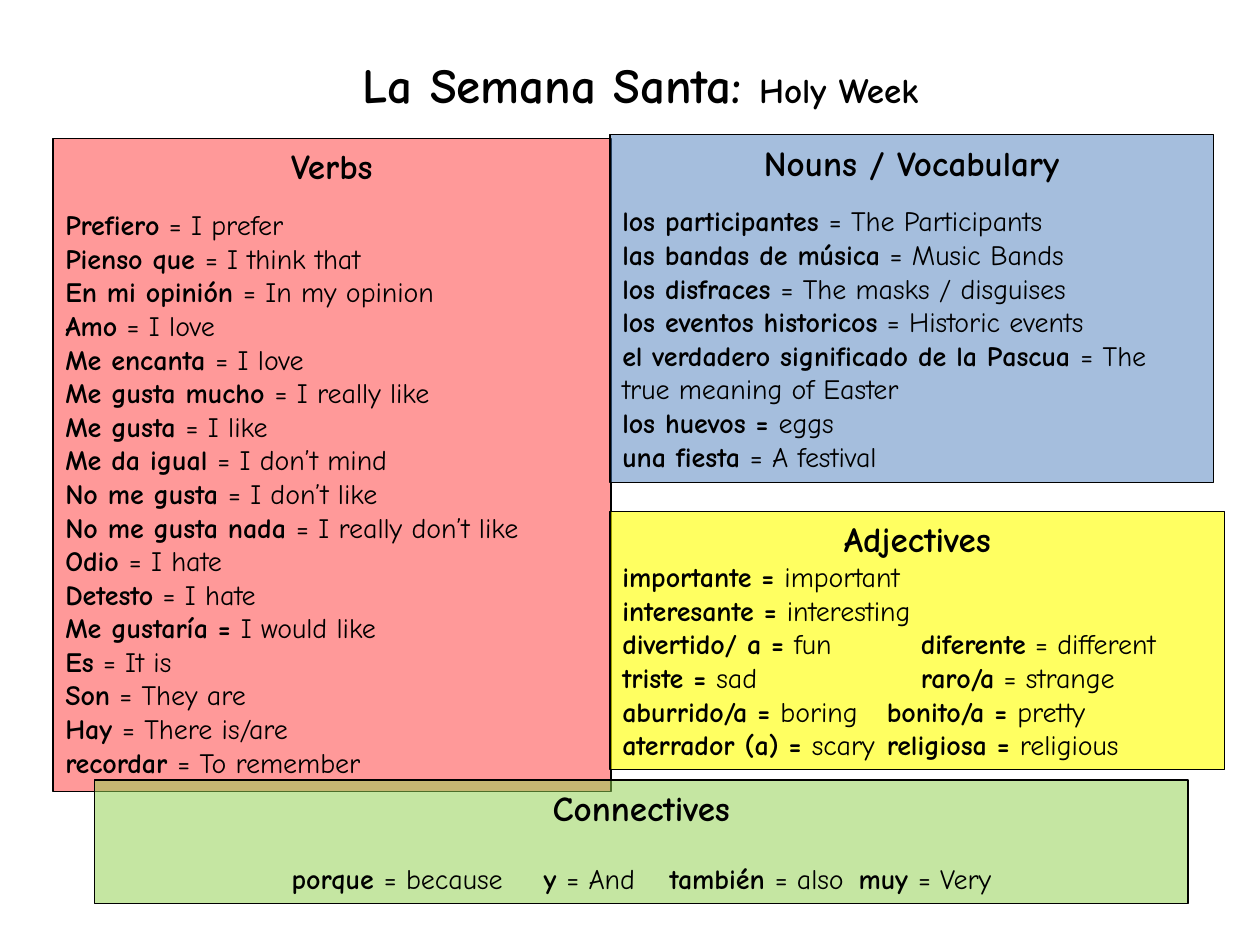
from dataclasses import dataclass

from lxml import etree
from pptx import Presentation
from pptx import util as u
from pptx.dml.color import RGBColor
from pptx.enum import shapes, text
from pptx.oxml.ns import qn

FONT = "Comic Neue"
BLACK = "000000"


@dataclass
class Panel:
    """A coloured word list; in each line "|" switches between bold and plain."""
    title: str
    box: tuple[float, float, float, float]
    color: str
    opacity: int
    lines: list[str]
    gap: float = 0
    centered: bool = False
    tabs: tuple[float, ...] = ()


PANELS = [
    Panel("Verbs", (0.42, 1.1, 4.43, 5.18), "FF0000", 40, [
        "Prefiero| = I prefer",
        "Pienso que |= I think that",
        "En mi opinión |= In my opinion",
        "Amo| = I love",
        "Me encanta |= I love",
        "Me gusta mucho |= I really like",
        "Me gusta |= I like",
        "Me da igual |= I don’t mind",
        "No me gusta |= I don’t like",
        "No me gusta nada |= I really don’t like",
        "Odio |= I hate",
        "Detesto| = I hate",
        "Me gustaría = |I would like",
        "Es| = It is",
        "Son| = They are",
        "Hay |= There is/are",
        "recordar |= To remember",
    ], gap=12),
    Panel("Nouns / Vocabulary", (4.84, 1.07, 4.79, 2.76), "4F81BD", 51, [
        "los participantes |= The Participants",
        "las bandas de música| = Music Bands",
        "los disfraces |= The masks / disguises",
        "los eventos historicos| = Historic events",
        "el verdadero significado de la Pascua |= The true meaning of Easter",
        "los huevos = |eggs",
        "una fiesta |= A festival",
    ], gap=12),
    Panel("Connectives", (0.75, 6.19, 8.68, 0.98), "92D050", 53, [
        "porque |= because\t|y |= And\t|también |= also\t|muy |= Very",
    ], gap=19, centered=True),
    Panel("Adjectives", (4.84, 4.06, 4.88, 2.05), "FFFF00", 62, [
        "importante = |important",
        "interesante = |interesting",
        "divertido/ a = |fun\t|diferente| = different",
        "triste = |sad\t|raro/a| = strange",
        "aburrido/a = |boring\t|bonito/a = |pretty",
        "aterrador (a) = |scary\t|religiosa = |religious",
    ], tabs=(2.1, 2.37)),
]


def rgb(color: str) -> RGBColor:
    return RGBColor.from_string(color)


def add_text(paragraph, content: str, *, size: float = 16, bold: bool = True) -> None:
    run = paragraph.add_run()
    run.text = content
    run.font.name = FONT
    run.font.size = u.Pt(size)
    run.font.bold = bold
    run.font.color.rgb = rgb(BLACK)


def add_tab(paragraph, position: float) -> None:
    properties = paragraph._p.get_or_add_pPr()
    tab_list = etree.SubElement(properties, qn("a:tabLst"))
    etree.SubElement(tab_list, qn("a:tab"), pos=str(u.Inches(position)), algn="l")


def set_opacity(shape, percent: int) -> None:
    color = shape.fill._xPr.find(qn("a:solidFill"))[0]
    etree.SubElement(color, qn("a:alpha"), val=str(percent * 1000))


def add_panel(slide, panel: Panel) -> None:
    shape = slide.shapes.add_shape(
        shapes.MSO_SHAPE.RECTANGLE, *(u.Inches(length) for length in panel.box))
    shape.shadow.inherit = False
    shape.fill.solid()
    shape.fill.fore_color.rgb = rgb(panel.color)
    set_opacity(shape, panel.opacity)
    shape.line.color.rgb = rgb(BLACK)
    shape.line.width = u.Pt(0.75)

    frame = shape.text_frame
    frame.word_wrap = True
    frame.vertical_anchor = text.MSO_ANCHOR.TOP
    heading = frame.paragraphs[0]
    heading.alignment = text.PP_ALIGN.CENTER
    heading.space_after = u.Pt(panel.gap)
    add_text(heading, panel.title, size=20)

    for line in panel.lines:
        paragraph = frame.add_paragraph()
        paragraph.alignment = (
            text.PP_ALIGN.CENTER if panel.centered else text.PP_ALIGN.LEFT)
        if "\t" in line and panel.tabs:
            # Short pairs sit at the first stop, the others at the second
            near = line.startswith(("aburrido", "aterrador"))
            add_tab(paragraph, panel.tabs[0] if near else panel.tabs[1])
        for index, part in enumerate(line.split("|")):
            add_text(paragraph, part, bold=index % 2 == 0)


def main() -> None:
    presentation = Presentation()
    presentation.slide_width = u.Inches(10)
    presentation.slide_height = u.Inches(7.5)
    slide = presentation.slides.add_slide(presentation.slide_layouts[6])

    # Title
    title = slide.shapes.add_textbox(
        u.Inches(0.48), u.Inches(0.38), u.Inches(9.21), u.Inches(0.57))
    title.text_frame.word_wrap = True
    paragraph = title.text_frame.paragraphs[0]
    paragraph.alignment = text.PP_ALIGN.CENTER
    add_text(paragraph, "La Semana Santa: ", size=28)
    add_text(paragraph, "Holy Week", size=20)

    # Word lists, from back to front
    for panel in PANELS:
        add_panel(slide, panel)

    presentation.save("out.pptx")


if __name__ == "__main__":
    main()
